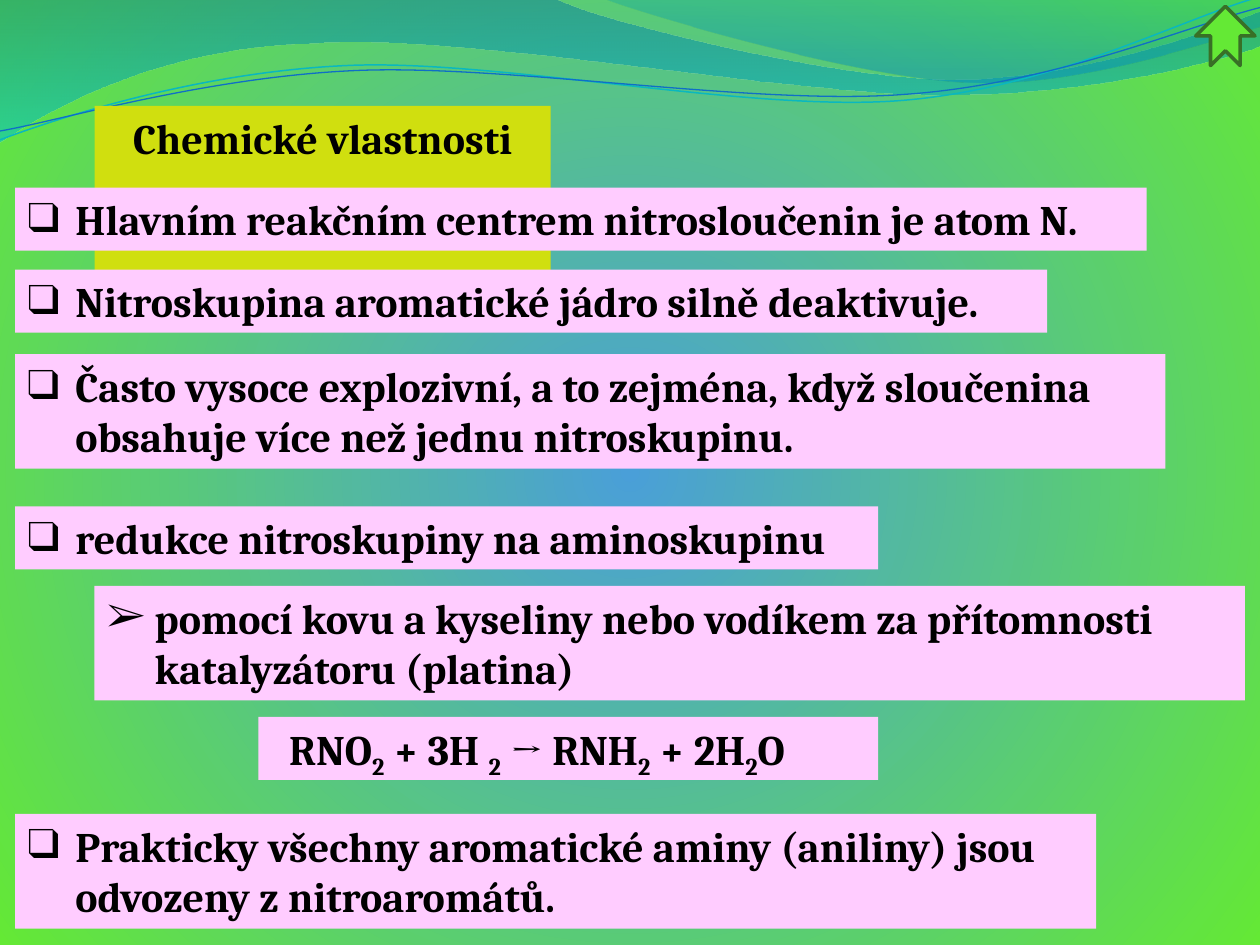
from dataclasses import dataclass

from lxml.etree import SubElement
from pptx import Presentation
from pptx.dml.color import RGBColor as Rgb
from pptx.enum.shapes import MSO_SHAPE as Shape
from pptx.enum.text import MSO_ANCHOR as Anchor, MSO_AUTO_SIZE as AutoSize, PP_ALIGN as Align
from pptx.oxml.ns import qn
from pptx.util import Inches, Pt


@dataclass(frozen=True)
class Theme:
    font: str = "Cambria"
    size: int = 24
    text: str = "000000"
    title_fill: str = "D0DF0F"
    box_fill: str = "FFCCFF"
    arrow_fill: str = "64E935"
    arrow_line: str = "387026"
    background: tuple = ((0, "4A9FD8", 100), (100, "64E935", 100))
    wide_wave: tuple = ((0, "0074A1", 45), (100, "00C6CF", 55))
    right_wave: tuple = ((0, "00A1A9", 30), (80, "008BBF", 45))
    upper_line: str = "0AB8BF"
    lower_line: str = "0F6FC6"


class SlideBuilder:
    def __init__(self, slide, theme):
        self.slide = slide
        self.theme = theme

    def gradient(self, fill, element, stops, circular=False):
        fill.gradient()
        gradient = next(element.iter(qn("a:gradFill")))
        gradient.clear()
        stop_list = SubElement(gradient, qn("a:gsLst"))
        for position, color, opacity in stops:
            stop = SubElement(stop_list, qn("a:gs"), pos=str(position * 1000))
            tint = SubElement(stop, qn("a:srgbClr"), val=color)
            if opacity < 100:
                SubElement(tint, qn("a:alpha"), val=str(opacity * 1000))
        if circular:
            path = SubElement(gradient, qn("a:path"), path="circle")
            SubElement(path, qn("a:fillToRect"), l="50000", t="50000", r="50000", b="50000")
        else:
            SubElement(gradient, qn("a:lin"), ang="5400000", scaled="0")

    def background(self):
        self.gradient(self.slide.background.fill, self.slide._element,
                      self.theme.background, circular=True)

    def curve(self, start, segments, stops=None, line=None, width=0.75):
        """Six numbers make a cubic segment, two make a straight one."""
        points = [(Inches(x), Inches(y)) for segment in segments
                  for x, y in zip(segment[::2], segment[1::2])]
        builder = self.slide.shapes.build_freeform(*map(Inches, start))
        builder.add_line_segments(points, close=stops is not None)
        shape = builder.convert_to_shape()
        self.bend(shape, segments)
        shape.shadow.inherit = False
        if stops:
            self.gradient(shape.fill, shape._element, stops)
            shape.line.fill.background()
        else:
            shape.fill.background()
            shape.line.color.rgb = Rgb.from_string(line)
            shape.line.width = Pt(width)

    def bend(self, shape, segments):
        """Join the three steps of each cubic segment into one curve."""
        steps = iter(list(shape._element.iter(qn("a:lnTo"))))
        for segment in segments:
            group = [next(steps) for _ in range(len(segment) // 2)]
            if len(group) == 3:
                group[0].tag = qn("a:cubicBezTo")
                for step in group[1:]:
                    group[0].append(step[0])
                    step.getparent().remove(step)

    def format_runs(self, paragraph):
        for run in paragraph.runs:
            run.font.name = self.theme.font
            run.font.size = Pt(self.theme.size)
            run.font.bold = True
            run.font.color.rgb = Rgb.from_string(self.theme.text)

    def prepare(self, shape, fill):
        shape.fill.solid()
        shape.fill.fore_color.rgb = Rgb.from_string(fill)
        frame = shape.text_frame
        frame.word_wrap = True
        frame.auto_size = AutoSize.SHAPE_TO_FIT_TEXT
        frame.vertical_anchor = Anchor.TOP
        return frame.paragraphs[0]

    def title(self, text, left, top, width, height):
        shape = self.slide.shapes.title
        shape.left, shape.top, shape.width, shape.height = map(
            Inches, (left, top, width, height))
        paragraph = self.prepare(shape, self.theme.title_fill)
        paragraph.text = text
        paragraph.alignment = Align.CENTER
        self.format_runs(paragraph)
        # Bring the title in front of the waves
        self.slide.shapes._spTree.append(shape._element)

    def box(self, left, top, width, height):
        shape = self.slide.shapes.add_textbox(*map(Inches, (left, top, width, height)))
        return self.prepare(shape, self.theme.box_fill)

    def bullet(self, text, left, top, width, lines=1, mark="❑"):
        paragraph = self.box(left, top, width, 0.5 if lines == 1 else 0.91)
        properties = paragraph._p.get_or_add_pPr()
        properties.set("marL", str(Inches(0.38)))
        properties.set("indent", str(Inches(-0.38)))
        SubElement(properties, qn("a:buFont"), typeface=self.theme.font)
        SubElement(properties, qn("a:buChar"), char=mark)
        paragraph.text = text
        self.format_runs(paragraph)

    def formula(self, parts, left, top, width):
        """Every second part is a subscript."""
        paragraph = self.box(left, top, width, 0.5)
        for part in parts:
            paragraph.add_run().text = part
        self.format_runs(paragraph)
        for run in paragraph.runs[1::2]:
            run._r.get_or_add_rPr().set("baseline", "-25000")

    def up_arrow(self, left, top, size):
        shape = self.slide.shapes.add_shape(
            Shape.NOTCHED_RIGHT_ARROW, *map(Inches, (left, top, size, size)))
        shape.rotation = 270
        shape.shadow.inherit = False
        shape.fill.solid()
        shape.fill.fore_color.rgb = Rgb.from_string(self.theme.arrow_fill)
        shape.line.color.rgb = Rgb.from_string(self.theme.arrow_line)
        shape.line.width = Pt(2)


def main():
    presentation = Presentation()
    presentation.slide_width, presentation.slide_height = Inches(10), Inches(7.5)
    theme = Theme()
    slide = presentation.slides.add_slide(presentation.slide_layouts[5])
    page = SlideBuilder(slide, theme)

    # Background and waves
    page.background()
    page.curve((0, 0), [(4.4, -0.01), (4.76, 0.17, 6.64, 0.63, 7.58, 0.63),
                        (8.53, 0.63, 9.58, 0.26, 10, 0.09), (10.01, 0.36),
                        (9.83, 0.44, 8.7, 0.76, 7.46, 0.75),
                        (6.22, 0.75, 3.82, 0.28, 2.57, 0.34),
                        (1.29, 0.36, 0.46, 0.83, -0.01, 1.13)], stops=theme.wide_wave)
    page.curve((4.79, -0.01), [(5.09, 0.11, 6.82, 0.62, 7.69, 0.65),
                               (8.56, 0.69, 9.61, 0.32, 10, 0.21), (10, 0)],
               stops=theme.right_wave)
    page.curve((0, 1.11), [(0.48, 0.93, 1.58, 0.57, 2.77, 0.52),
                           (3.95, 0.47, 5.93, 0.89, 7.13, 0.8),
                           (8.33, 0.71, 9.38, 0.15, 9.98, -0.02)],
               line=theme.upper_line, width=0.85)
    page.curve((0, 1.04), [(0.47, 0.96, 1.64, 0.61, 2.83, 0.56),
                           (4.03, 0.51, 5.97, 0.84, 7.17, 0.75),
                           (8.36, 0.67, 9.41, 0.21, 10, 0.06)], line=theme.lower_line)

    # Title and statements
    page.title("Chemické vlastnosti", 0.75, 0.84, 3.62, 0.5)
    page.bullet("Hlavním reakčním centrem nitrosloučenin je atom N.", 0.12, 1.49, 8.98)
    page.bullet("Nitroskupina aromatické jádro silně deaktivuje.", 0.12, 2.14, 8.19)
    page.bullet("Často vysoce explozivní, a to zejména, když sloučenina "
                "obsahuje více než jednu nitroskupinu.", 0.12, 2.81, 9.13, lines=2)

    # Reduction with its equation
    page.bullet("redukce nitroskupiny na aminoskupinu", 0.12, 4.02, 6.85)
    page.bullet("pomocí kovu a kyseliny nebo vodíkem za přítomnosti\v"
                "katalyzátoru (platina)", 0.75, 4.65, 9.13, lines=2, mark="➢")
    page.formula(["  RNO", "2", " + 3H ", "2", " → RNH", "2", " + 2H", "2", "O"],
                 2.05, 5.69, 4.92)
    page.bullet("Prakticky všechny aromatické aminy (aniliny) jsou "
                "odvozeny z nitroaromátů.", 0.12, 6.46, 8.58, lines=2)

    # Navigation arrow
    page.up_arrow(9.49, 0.05, 0.47)
    presentation.save("out.pptx")


if __name__ == "__main__":
    main()
